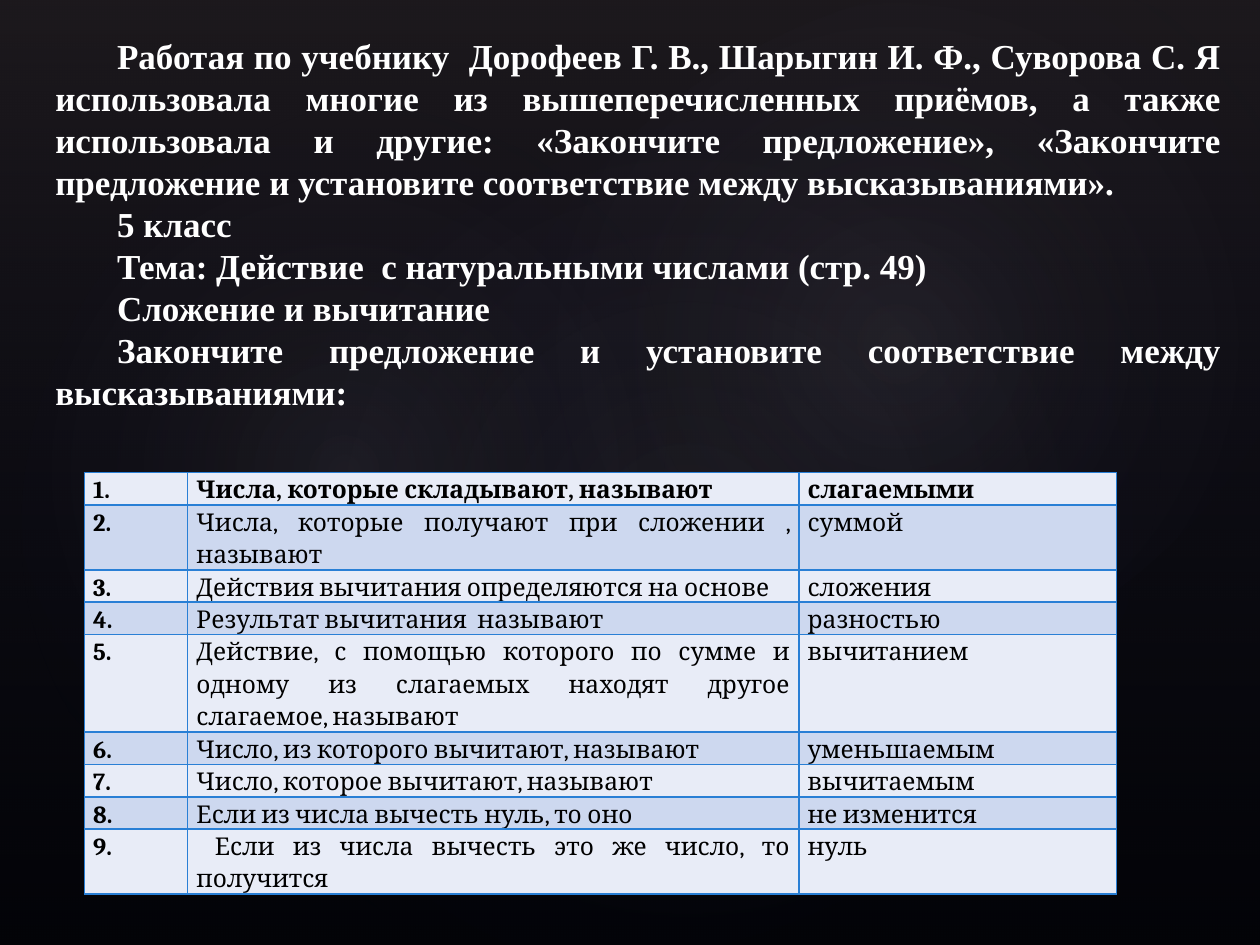
from pptx import Presentation
from pptx.dml.color import RGBColor
from pptx.enum.shapes import MSO_SHAPE
from pptx.enum.text import MSO_ANCHOR, PP_ALIGN
from pptx.oxml import parse_xml
from pptx.oxml.ns import nsdecls, qn
from pptx.util import Inches, Pt

RECTANGLE, OVAL = MSO_SHAPE.RECTANGLE, MSO_SHAPE.OVAL
JUSTIFY = PP_ALIGN.JUSTIFY
MIDDLE = MSO_ANCHOR.MIDDLE
BLACK = RGBColor(0x00, 0x00, 0x00)
WHITE = RGBColor(0xFF, 0xFF, 0xFF)
PLUM = RGBColor(0x50, 0x46, 0x52)
NAVY = RGBColor(0x24, 0x28, 0x52)
MAUVE = RGBColor(0xC4, 0xBC, 0xC6)
BORDER_BLUE = RGBColor(0x29, 0x7F, 0xD5)
ROW_FILLS = [RGBColor(0xE8, 0xEC, 0xF7), RGBColor(0xCD, 0xD8, 0xEF)]

PARAGRAPHS = [
    "Работая по учебнику  Дорофеев Г. В., Шарыгин И. Ф., Суворова С. Я использовала "
    "многие из вышеперечисленных приёмов, а также использовала и другие: "
    "«Закончите предложение», «Закончите предложение и установите соответствие "
    "между высказываниями». ",
    "5 класс",
    "Тема: Действие  с натуральными числами (стр. 49)",
    "Сложение и вычитание",
    "Закончите предложение и установите соответствие между высказываниями: ",
]
STATEMENTS = [
    ("Числа, которые складывают, называют", "слагаемыми", 1),
    ("Числа, которые получают при сложении , называют ", "суммой", 2),
    ("Действия вычитания определяются на основе", "сложения", 1),
    ("Результат вычитания  называют", "разностью", 1),
    ("Действие, с помощью которого по сумме и одному из слагаемых находят "
     "другое слагаемое, называют ", "вычитанием", 3),
    ("Число, из которого вычитают, называют", "уменьшаемым", 1),
    ("Число, которое вычитают, называют", "вычитаемым", 1),
    ("Если из числа вычесть нуль, то оно", "не изменится", 1),
    (" Если из числа вычесть это же число, то получится", "нуль", 2),
]
GLOWS = [
    (1.5, 1.14, 7.92, 6.24, 328.7, 7),
    (-0.3, 1.28, 6.06, 4.9, 294.3, 8),
    (3.58, 0.13, 7.09, 5.2, 328.7, 8),
]
LINEAR = '<a:lin ang="5400000" scaled="0"/>'
RADIAL = '<a:path path="circle"><a:fillToRect l="50000" t="50000" r="50000" b="50000"/></a:path>'

presentation = Presentation()
presentation.slide_width, presentation.slide_height = Inches(10), Inches(7.5)
slide = presentation.slides.add_slide(presentation.slide_layouts[6])
slide.background.fill.solid()
slide.background.fill.fore_color.rgb = BLACK


def add_gradient_shape(kind, left, top, width, height, stops, direction):
    shape = slide.shapes.add_shape(kind, Inches(left), Inches(top), Inches(width), Inches(height))
    shape.shadow.inherit = False
    shape.line.fill.background()
    shape.fill.background()
    stop_xml = "".join(
        f'<a:gs pos="{position * 1000}"><a:srgbClr val="{color}">'
        f'<a:alpha val="{alpha * 1000}"/></a:srgbClr></a:gs>'
        for position, color, alpha in stops)
    properties = shape.element.spPr
    properties.replace(properties.find(qn("a:noFill")), parse_xml(
        f'<a:gradFill {nsdecls("a")} rotWithShape="1"><a:gsLst>{stop_xml}</a:gsLst>'
        f'{direction}</a:gradFill>'))
    return shape


add_gradient_shape(RECTANGLE, 0, 0, 10, 7.5, [(0, PLUM, 36), (100, NAVY, 10)], LINEAR)
for left, top, width, height, rotation, alpha in GLOWS:
    glow = add_gradient_shape(OVAL, left, top, width, height,
                              [(0, MAUVE, alpha), (58, NAVY, 0)], RADIAL)
    glow.rotation = rotation

table = slide.shapes.add_table(len(STATEMENTS), 3, Inches(0.67), Inches(3.75),
                               Inches(8.19), Inches(3.25)).table
for column, width in zip(table.columns, (0.82, 4.85, 2.52)):
    column.width = Inches(width)
for row_index, (statement, answer, line_count) in enumerate(STATEMENTS):
    table.rows[row_index].height = Inches(0.25 * line_count)
    for column_index, text in enumerate((f"{row_index + 1}.", statement, answer)):
        cell = table.cell(row_index, column_index)
        cell.margin_left = cell.margin_right = Inches(0.07)
        cell.margin_top = cell.margin_bottom = 0
        cell.text = text
        paragraph = cell.text_frame.paragraphs[0]
        paragraph.alignment = JUSTIFY
        paragraph.line_spacing = 1.15
        paragraph.font.name = "Cambria"
        paragraph.font.size = Pt(14)
        paragraph.font.bold = row_index == 0 or column_index == 0
        paragraph.font.color.rgb = BLACK
        cell_properties = cell._tc.get_or_add_tcPr()
        for side in "LRTB":
            cell_properties.append(parse_xml(
                f'<a:ln{side} {nsdecls("a")} w="{Pt(1)}"><a:solidFill>'
                f'<a:srgbClr val="{BORDER_BLUE}"/></a:solidFill></a:ln{side}>'))
        cell.fill.solid()
        cell.fill.fore_color.rgb = ROW_FILLS[row_index % 2]

text_box = slide.shapes.add_textbox(Inches(0.34), Inches(0.21), Inches(9.45), Inches(3.13))
text_frame = text_box.text_frame
text_frame.word_wrap = True
text_frame.vertical_anchor = MIDDLE
for index, text in enumerate(PARAGRAPHS):
    paragraph = text_frame.add_paragraph() if index else text_frame.paragraphs[0]
    paragraph.text = text
    paragraph.alignment = JUSTIFY
    paragraph.font.name = "Times New Roman"
    paragraph.font.size = Pt(20)
    paragraph.font.bold = True
    paragraph.font.color.rgb = WHITE
    paragraph._p.get_or_add_pPr().set("indent", str(Inches(0.49)))

presentation.save("out.pptx")
